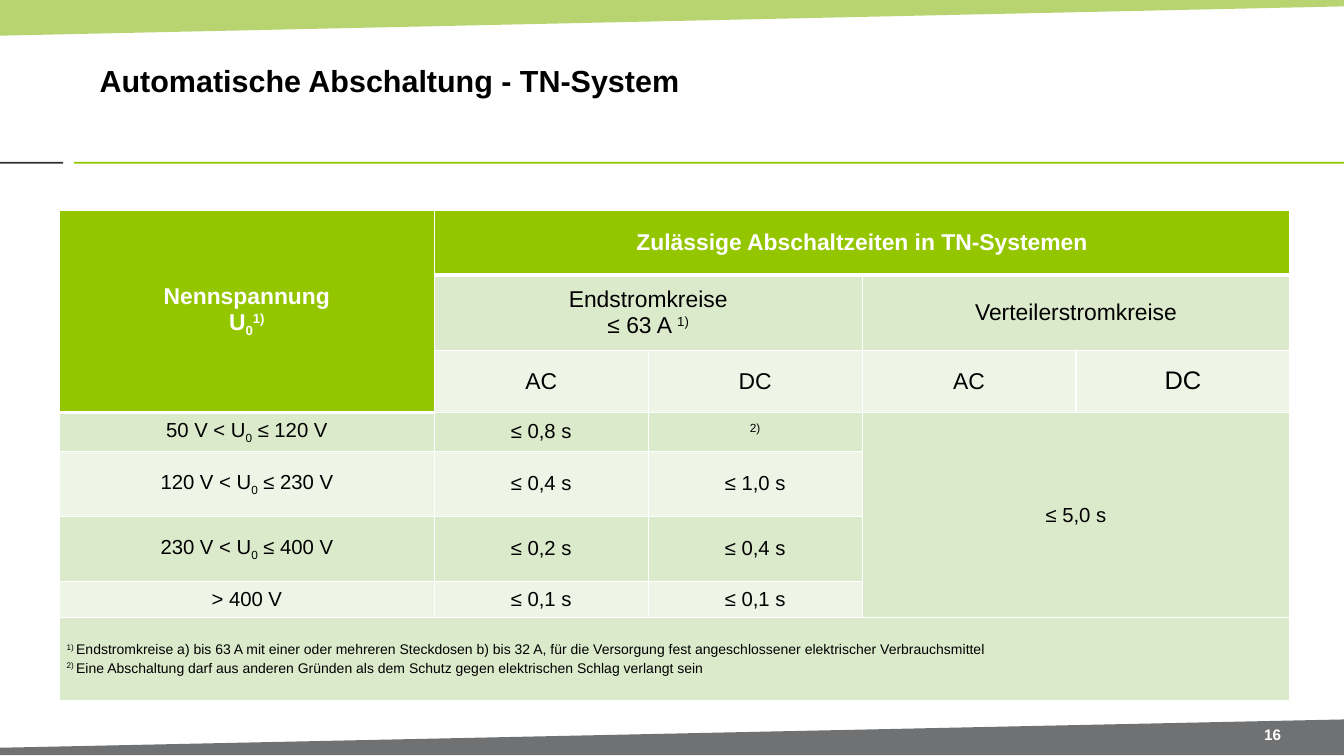
from pptx import Presentation
from pptx import util as u
from pptx.dml.color import RGBColor
from pptx.enum import shapes, text
from pptx.oxml import ns, xmlchemy

WIDTH, HEIGHT = 14.7, 8.27
GREEN, PALE, PALER = "94C600", "DCEACC", "EEF5E7"
WHITE, BLACK = "FFFFFF", "000000"
BASELINES = {"_": "-25000", "^": "30000"}

COLUMNS = [4.1] + [2.34] * 4
ROWS = [0.71, 0.82, 0.68, 0.43, 0.71, 0.71, 0.4, 0.9]
SIZES = [18] * 3 + [16] * 4 + [11]
MERGES = [(0, 0, 2, 0), (0, 1, 0, 4), (1, 1, 1, 2), (1, 3, 1, 4), (3, 3, 6, 4), (7, 0, 7, 4)]
HEAVY_TOPS = {(3, 0)} | {(1, col) for col in range(1, 5)}
CELLS = [
    ["Nennspannung\nU|_0|^1)", "Zulässige Abschaltzeiten in TN-Systemen"],
    ["", "Endstromkreise\n≤ 63 A |^1)", "", "Verteilerstromkreise"],
    ["", "AC", "DC", "AC", "DC"],
    ["50 V < U|_0| ≤ 120 V", "≤ 0,8 s", "^2)", "≤ 5,0 s"],
    ["120 V < U|_0| ≤ 230 V", "≤ 0,4 s", "≤ 1,0 s"],
    ["230 V < U|_0| ≤ 400 V", "≤ 0,2 s", "≤ 0,4 s"],
    ["> 400 V", "≤ 0,1 s", "≤ 0,1 s"],
    ["^1) |Endstromkreise a) bis 63 A mit einer oder mehreren Steckdosen b) bis 32 A, "
     "für die Versorgung fest angeschlossener elektrischer Verbrauchsmittel\n"
     "^2) |Eine Abschaltung darf aus anderen Gründen als dem Schutz gegen "
     "elektrischen Schlag verlangt sein"],
]


def color(value):
    return RGBColor.from_string(value)


class SlideBuilder:
    font = "Arial"

    def __init__(self, slide):
        self.slide = slide

    def paint(self, shape, fill, alpha=None):
        shape.shadow.inherit = False
        shape.fill.solid()
        shape.fill.fore_color.rgb = color(fill)
        shape.line.fill.background()
        if alpha:
            tint = shape.element.spPr.find(".//" + ns.qn("a:srgbClr"))
            opacity = xmlchemy.OxmlElement("a:alpha")
            opacity.set("val", str(alpha * 1000))
            tint.append(opacity)

    def band(self, points, fill, alpha=None):
        corners = [(u.Inches(x), u.Inches(y)) for x, y in points]
        outline = self.slide.shapes.build_freeform(*corners[0])
        outline.add_line_segments(corners[1:], close=True)
        self.paint(outline.convert_to_shape(), fill, alpha)

    def rule(self, left, width, fill):
        place = [u.Inches(n) for n in (left, 1.77, width, 0.02)]
        self.paint(self.slide.shapes.add_shape(shapes.MSO_SHAPE.RECTANGLE, *place), fill)

    def set_text(self, frame, content, align, size, ink, bold=False, space=0):
        for index, line in enumerate(content.split("\n")):
            para = frame.paragraphs[0] if index == 0 else frame.add_paragraph()
            para.alignment = align
            para.space_before = u.Pt(space if index else 0)
            for piece in line.split("|"):
                baseline = BASELINES.get(piece[:1])
                span = para.add_run()
                span.text = piece[1:] if baseline else piece
                style = {"name": self.font, "size": u.Pt(size), "bold": bold}
                for key, value in style.items():
                    setattr(span.font, key, value)
                span.font.color.rgb = color(ink)
                if baseline:
                    span._r.get_or_add_rPr().set("baseline", baseline)

    def text_area(self, box, place, content, align, size, ink):
        for key, value in zip(("left", "top", "width", "height"), place):
            setattr(box, key, u.Inches(value))
        frame = box.text_frame
        layout = {
            "word_wrap": True, "auto_size": text.MSO_AUTO_SIZE.NONE,
            "vertical_anchor": text.MSO_ANCHOR.MIDDLE,
            "margin_left": u.Inches(0.11), "margin_right": u.Inches(0.11),
            "margin_top": u.Inches(0.06), "margin_bottom": u.Inches(0.06),
        }
        for key, value in layout.items():
            setattr(frame, key, value)
        self.set_text(frame, content, align, size, ink, bold=True)

    def title(self, place, content):
        self.text_area(self.slide.shapes.title, place, content, text.PP_ALIGN.LEFT, 24, BLACK)

    def page_number(self, place, content):
        box = self.slide.shapes.add_textbox(*[u.Inches(n) for n in place])
        self.text_area(box, place, content, text.PP_ALIGN.CENTER, 12, WHITE)

    def borders(self, cell, widths):
        props = cell._tc.get_or_add_tcPr()
        for index, (side, width) in enumerate(widths.items()):
            line = xmlchemy.OxmlElement("a:ln" + side)
            line.set("w", str(u.Pt(width)))
            fill = xmlchemy.OxmlElement("a:solidFill")
            tint = xmlchemy.OxmlElement("a:srgbClr")
            tint.set("val", WHITE)
            fill.append(tint)
            line.append(fill)
            props.insert(index, line)

    def cell(self, cell, row, col, content):
        header = row == 0 or (col == 0 and row < 3)
        layout = {
            "vertical_anchor": text.MSO_ANCHOR.MIDDLE,
            "margin_left": u.Inches(0.08), "margin_right": u.Inches(0.08),
            "margin_top": u.Inches(0.04), "margin_bottom": u.Inches(0.04),
        }
        for key, value in layout.items():
            setattr(cell, key, value)
        cell.fill.solid()
        cell.fill.fore_color.rgb = color(GREEN if header else PALE if row % 2 else PALER)
        below = (row + cell.span_height, col)
        self.borders(cell, {
            "L": 1, "R": 1,
            "T": 3 if (row, col) in HEAVY_TOPS else 1,
            "B": 3 if below in HEAVY_TOPS else 1,
        })
        if content:
            note = row == len(ROWS) - 1
            align = text.PP_ALIGN.LEFT if note else text.PP_ALIGN.CENTER
            size = 20 if (row, col) == (2, 4) else SIZES[row]
            self.set_text(cell.text_frame, content, align, size,
                          WHITE if header else BLACK, header, 2.2 if note else 0)

    def table(self, left, top):
        place = [u.Inches(n) for n in (left, top, sum(COLUMNS), sum(ROWS))]
        table = self.slide.shapes.add_table(len(ROWS), len(COLUMNS), *place).table
        table.first_row = table.horz_banding = False
        for column, width in zip(table.columns, COLUMNS):
            column.width = u.Inches(width)
        for line, height in zip(table.rows, ROWS):
            line.height = u.Inches(height)
        for row, col, last_row, last_col in MERGES:
            table.cell(row, col).merge(table.cell(last_row, last_col))
        for row, contents in enumerate(CELLS):
            for col in range(len(COLUMNS)):
                content = contents[col] if col < len(contents) else ""
                self.cell(table.cell(row, col), row, col, content)


def main():
    deck = Presentation()
    deck.slide_width, deck.slide_height = u.Inches(WIDTH), u.Inches(HEIGHT)
    page = SlideBuilder(deck.slides.add_slide(deck.slide_layouts[5]))
    page.band([(0, 0), (WIDTH, 0), (WIDTH, 0.07), (0, 0.39)], "95C02A", 67)
    page.rule(0, 0.69, "313130")
    page.rule(0.81, WIDTH - 0.81, GREEN)
    page.band([(WIDTH, 8.26), (0, 8.26), (0, 8.18), (WIDTH, 7.87)], "707173")
    page.title((0.98, 0.28, 11.54, 1.19), "Automatische Abschaltung - TN-System")
    page.page_number((13.49, 7.89, 0.86, 0.29), "16")
    page.table(0.65, 2.3)
    deck.save("out.pptx")


if __name__ == "__main__":
    main()
